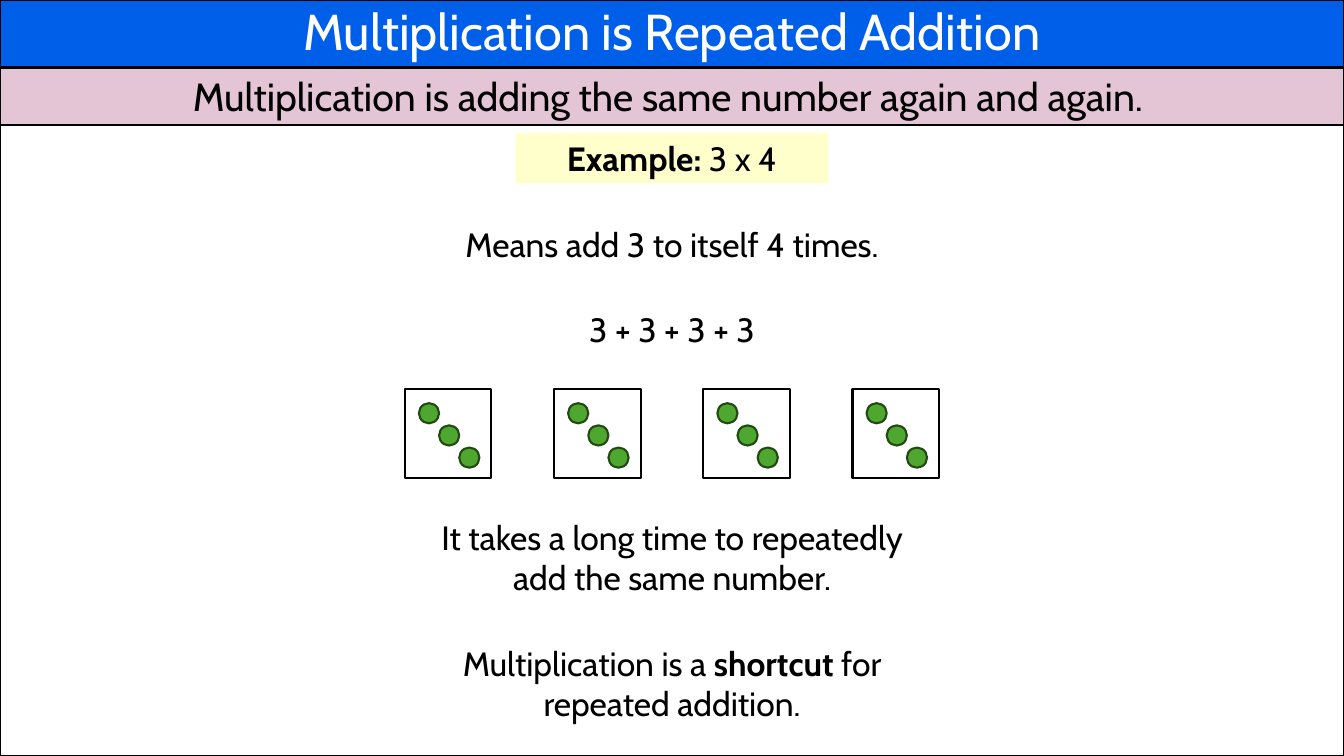
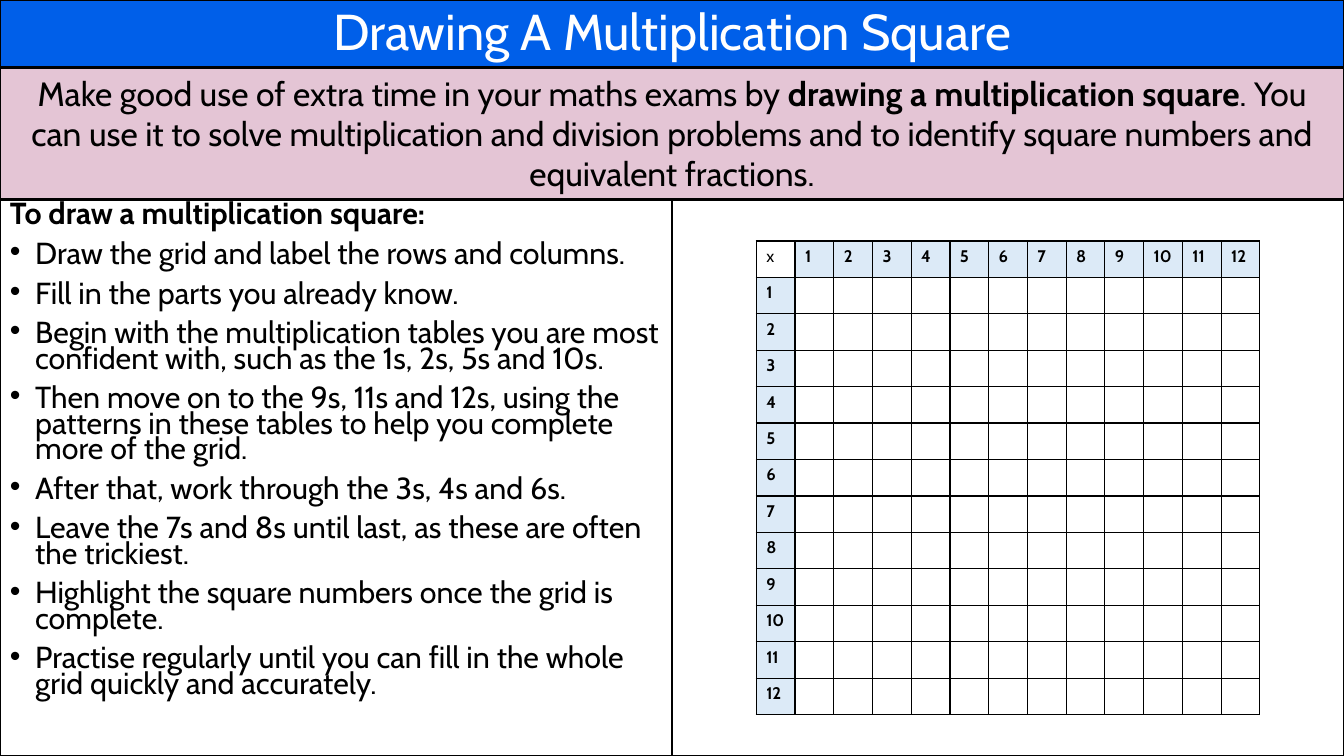
import pptx
import pptx.util
import pptx.dml.color
import pptx.enum.shapes
import pptx.enum.text
import pptx.oxml.ns
from lxml import etree

RGBColor = pptx.dml.color.RGBColor
Inches, Pt = pptx.util.Inches, pptx.util.Pt
SHAPE = pptx.enum.shapes.MSO_SHAPE
ALIGN = pptx.enum.text.PP_ALIGN
ANCHOR = pptx.enum.text.MSO_ANCHOR
qn = pptx.oxml.ns.qn

BLACK = RGBColor(0x00, 0x00, 0x00)
WHITE = RGBColor(0xFF, 0xFF, 0xFF)
BLUE = RGBColor(0x00, 0x5F, 0xE9)
PINK = RGBColor(0xE4, 0xC5, 0xD5)
YELLOW = RGBColor(0xFF, 0xFF, 0xCC)
GREEN = RGBColor(0x4E, 0xA7, 0x2E)
DARK_GREEN = RGBColor(0x22, 0x49, 0x14)
PALE_BLUE = RGBColor(0xDC, 0xEA, 0xF7)

FONT = "Cabin"
W, H = 13.33, 7.5
TITLE_H = 0.67

ADDITION = {
    "title": "Multiplication is Repeated Addition",
    "intro": "Multiplication is adding the same number again and again. ",
    "example": "**Example:** 3 x 4",
    "steps": [
        (2.17, 0.5, "Means add 3 to itself 4 times."),
        (3.02, 0.5, "3 + 3 + 3 + 3"),
        (5.08, 0.91, "It takes a long time to repeatedly add the same number."),
        (6.33, 0.91, "Multiplication is a **shortcut** for repeated addition."),
    ],
    "groups": 4,
    "dots": 3,
}
SQUARE = {
    "title": "Drawing A Multiplication Square",
    "intro": "Make good use of extra time in your maths exams by **drawing a multiplication square**. "
             "You can use it to solve multiplication and division problems and to identify "
             "square numbers and equivalent fractions.",
    "heading": "**To draw a multiplication square:**",
    "bullets": [
        "Draw the grid and label the rows and columns.",
        "Fill in the parts you already know.",
        "Begin with the multiplication tables you are most confident with, such as the 1s, 2s, 5s and 10s.",
        "Then move on to the 9s, 11s and 12s, using the patterns in these tables to help you "
        "complete more of the grid.",
        "After that, work through the 3s, 4s and 6s.",
        "Leave the 7s and 8s until last, as these are often the trickiest.",
        "Highlight the square numbers once the grid is complete.",
        "Practise regularly until you can fill in the whole grid quickly and accurately.",
    ],
    "labels": ["x"] + [str(n) for n in range(1, 13)],
}


def add_box(shapes, x, y, w, h, fill=None, line=None, kind=SHAPE.RECTANGLE):
    sp = shapes.add_shape(kind, Inches(x), Inches(y), Inches(w), Inches(h))
    sp.shadow.inherit = False
    if fill is None:
        sp.fill.background()
    else:
        sp.fill.solid()
        sp.fill.fore_color.rgb = fill
    if line is None:
        sp.line.fill.background()
    else:
        sp.line.color.rgb = line
        sp.line.width = Pt(1.5)
    return sp


def format_run(r, size, color=BLACK, bold=False):
    r.font.name = FONT
    r.font.size = Pt(size)
    r.font.bold = bold
    r.font.color.rgb = color


def write(p, text, size, color=BLACK, align=ALIGN.CENTER):
    p.alignment = align
    for i, part in enumerate(text.split("**")):
        if part:
            r = p.add_run()
            r.text = part
            format_run(r, size, color, i % 2 == 1)


def fill_text(sp, text, size, color=BLACK, anchor=ANCHOR.TOP):
    tf = sp.text_frame
    tf.word_wrap = True
    tf.vertical_anchor = anchor
    write(tf.paragraphs[0], text, size, color)
    return tf


def add_bands(s, content, intro_h, intro_size):
    sp = add_box(s.shapes, 0, 0, W, TITLE_H, BLUE, BLACK)
    tf = fill_text(sp, content["title"], 36, WHITE, ANCHOR.MIDDLE)
    tf.paragraphs[0].line_spacing = 0.9
    sp = add_box(s.shapes, 0, TITLE_H, W, intro_h, PINK, BLACK)
    fill_text(sp, content["intro"], intro_size)
    return TITLE_H + intro_h


def add_dot_cards(s, count, dots, y=3.86, w=0.86, h=0.88, pitch=1.48, dot=0.2):
    left = (W - (count - 1) * pitch - w) / 2
    for i in range(count):
        x = left + i * pitch
        group = s.shapes.add_group_shape()
        add_box(group.shapes, x, y, w, h, WHITE, BLACK)
        for j in range(dots):
            add_box(group.shapes, x + 0.14 + j * 0.2, y + 0.14 + j * 0.22,
                    dot, dot, GREEN, DARK_GREEN, SHAPE.OVAL)


def add_bullet(p):
    pPr = p._p.get_or_add_pPr()
    pPr.set("marL", str(Inches(0.25)))
    pPr.set("indent", str(-Inches(0.25)))
    etree.SubElement(pPr, qn("a:buFont"), typeface="Arial")
    etree.SubElement(pPr, qn("a:buChar"), char="•")


def add_method(s, content, y):
    tf = add_box(s.shapes, 0, y, W / 2, H - y, line=BLACK).text_frame
    tf.word_wrap = True
    tf.vertical_anchor = ANCHOR.TOP
    for i, text in enumerate([content["heading"]] + content["bullets"]):
        p = tf.add_paragraph() if i else tf.paragraphs[0]
        p.line_spacing = 0.7
        if i:
            p.space_before = Pt(10)
            add_bullet(p)
        write(p, text, 21.7, align=ALIGN.LEFT)


def add_borders(cell):
    tcPr = cell._tc.get_or_add_tcPr()
    for i, side in enumerate(("lnL", "lnR", "lnT", "lnB")):
        ln = etree.Element(qn("a:" + side), w=str(Pt(1)))
        fill = etree.SubElement(ln, qn("a:solidFill"))
        etree.SubElement(fill, qn("a:srgbClr"), val=str(BLACK))
        tcPr.insert(i, ln)


def add_square(s, labels, x=7.5, y=2.39, w=5, h=4.7):
    n = len(labels)
    tbl = s.shapes.add_table(n, n, Inches(x), Inches(y), Inches(w), Inches(h)).table
    tbl.first_row = tbl.horz_banding = False
    for i in range(n):
        tbl.columns[i].width = Inches(w / n)
        tbl.rows[i].height = Inches(h / n)
        for j in range(n):
            cell = tbl.cell(i, j)
            p = cell.text_frame.paragraphs[0]
            if i and j:
                etree.SubElement(p._p, qn("a:endParaRPr"), sz="1200")
            else:
                p.text = labels[i + j]
                format_run(p.runs[0], 12, bold=i + j > 0)
            if (i == 0) != (j == 0):
                cell.fill.solid()
                cell.fill.fore_color.rgb = PALE_BLUE
            else:
                cell.fill.background()
            add_borders(cell)


def build_addition(s):
    content = ADDITION
    top = add_bands(s, content, 0.57, 28)
    add_box(s.shapes, 0, top, W, H - top, line=BLACK)
    example_w, step_w = 3.1, 4.92
    sp = add_box(s.shapes, (W - example_w) / 2, 1.32, example_w, 0.5, YELLOW)
    fill_text(sp, content["example"], 24)
    for y, h, text in content["steps"]:
        sp = s.shapes.add_textbox(Inches((W - step_w) / 2), Inches(y), Inches(step_w), Inches(h))
        fill_text(sp, text, 24)
    add_dot_cards(s, content["groups"], content["dots"])


def build_square(s):
    top = add_bands(s, SQUARE, 1.31, 24)
    add_method(s, SQUARE, top)
    add_box(s.shapes, W / 2, top, W / 2, H - top, line=BLACK)
    add_square(s, SQUARE["labels"])


def main():
    prs = pptx.Presentation()
    prs.slide_width, prs.slide_height = Inches(W), Inches(H)
    for build in (build_addition, build_square):
        build(prs.slides.add_slide(prs.slide_layouts[6]))
    prs.save("out.pptx")


if __name__ == "__main__":
    main()
